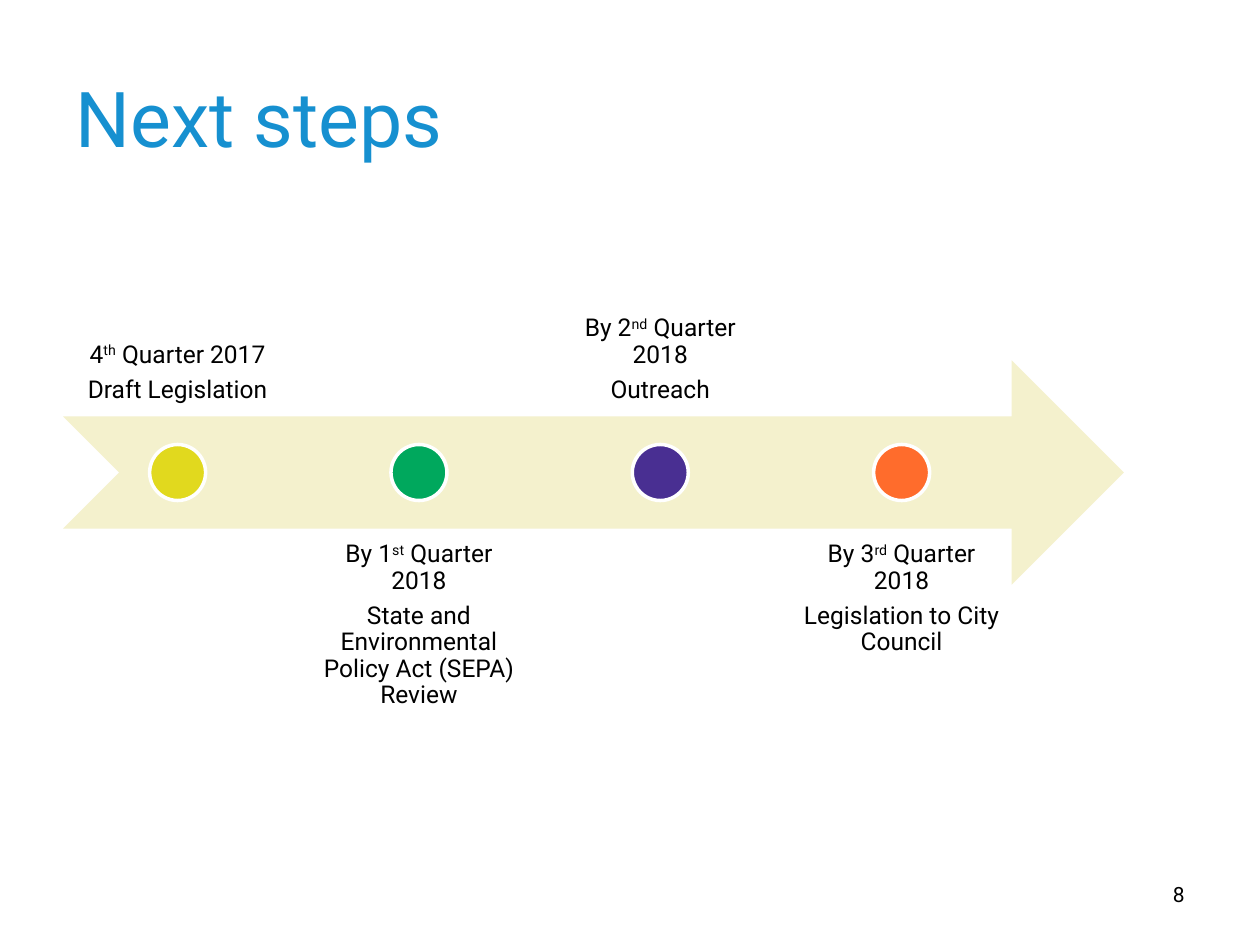
import dataclasses
import typing

import pptx
import pptx.dml.color
import pptx.enum.shapes
import pptx.enum.text
import pptx.util

Pt = pptx.util.Pt
Align = pptx.enum.text.PP_ALIGN
Anchor = pptx.enum.text.MSO_ANCHOR
Kind = pptx.enum.shapes.MSO_SHAPE

FACE = "Roboto"
BLACK = "000000"
LEFT, GAP = 36, 137.9
WIDE, HIGH = 131, 128.2
ARROW = (LEFT, 205.9, 606.2, HIGH)
DOT = 32


@dataclasses.dataclass
class Step:
    lead: str
    mark: str
    rest: str
    task: str
    hue: str
    above: bool


STEPS = [
    Step("4", "th", " Quarter 2017", "Draft Legislation", "E1D91E", True),
    Step("By 1", "st", " Quarter 2018",
         "State and Environmental Policy Act (SEPA) Review", "00A85D", False),
    Step("By 2", "nd", " Quarter 2018", "Outreach", "492F92", True),
    Step("By 3", "rd", " Quarter 2018", "Legislation to City Council",
         "FF6C2C", False),
]


def color(code: str) -> pptx.dml.color.RGBColor:
    return pptx.dml.color.RGBColor.from_string(code)


def apply(item: typing.Any, form: dict) -> None:
    for name, value in form.items():
        setattr(item, name, value)


def place(item: typing.Any, box: tuple) -> None:
    apply(item, dict(zip(("left", "top", "width", "height"), map(Pt, box))))


def write(para: typing.Any, text: str, size: float, code: str = BLACK) -> typing.Any:
    run = para.add_run()
    run.text = text
    apply(run.font, {"name": FACE, "size": Pt(size)})
    run.font.color.rgb = color(code)
    return run


def shape(slide: typing.Any, kind: Kind, box: tuple, code: str) -> typing.Any:
    item = slide.shapes.add_shape(kind, *map(Pt, box))
    item.shadow.inherit = False
    item.fill.solid()
    item.fill.fore_color.rgb = color(code)
    item.line.fill.background()
    return item


def label(slide: typing.Any, step: Step, left: float) -> None:
    top = 110.2 if step.above else 301.7
    frame = slide.shapes.add_textbox(*map(Pt, (left, top, WIDE, HIGH))).text_frame
    sides = ("left", "top", "right", "bottom")
    apply(frame, {f"margin_{side}": Pt(7.84) for side in sides})
    apply(frame, {
        "word_wrap": True,
        "vertical_anchor": Anchor.BOTTOM if step.above else Anchor.TOP,
    })
    date, task = frame.paragraphs[0], frame.add_paragraph()
    for para in (date, task):
        apply(para, {"alignment": Align.CENTER, "line_spacing": 0.9,
                     "space_after": Pt(4.9)})
    write(date, step.lead, 14)
    mark = write(date, step.mark, 14)
    mark._r.get_or_add_rPr().set("baseline", "30000")
    write(date, step.rest, 14)
    write(task, step.task, 14)


def dot(slide: typing.Any, step: Step, left: float) -> None:
    box = (left + (WIDE - DOT) / 2, ARROW[1] + (HIGH - DOT) / 2, DOT, DOT)
    item = shape(slide, Kind.OVAL, box, step.hue)
    item.line.color.rgb = color("FFFFFF")
    item.line.width = Pt(2)


def main() -> None:
    deck = pptx.Presentation()
    apply(deck, {"slide_width": Pt(720), "slide_height": Pt(540)})
    slide = deck.slides.add_slide(deck.slide_layouts[5])

    title = slide.shapes.title
    place(title, (36, 21.6, 648, 90))
    title.text_frame.vertical_anchor = Anchor.MIDDLE
    head = title.text_frame.paragraphs[0]
    head.alignment = Align.LEFT
    write(head, "Next steps", 44, "1690D0")

    page = slide.shapes.add_textbox(*map(Pt, (516, 500.4, 168, 28.8))).text_frame
    page.word_wrap = True
    page.paragraphs[0].alignment = Align.RIGHT
    write(page.paragraphs[0], "8", 12)

    shape(slide, Kind.NOTCHED_RIGHT_ARROW, ARROW, "F4F1CD")
    for rank, step in enumerate(STEPS):
        left = LEFT + rank * GAP
        label(slide, step, left)
        dot(slide, step, left)

    deck.save("out.pptx")


if __name__ == "__main__":
    main()
